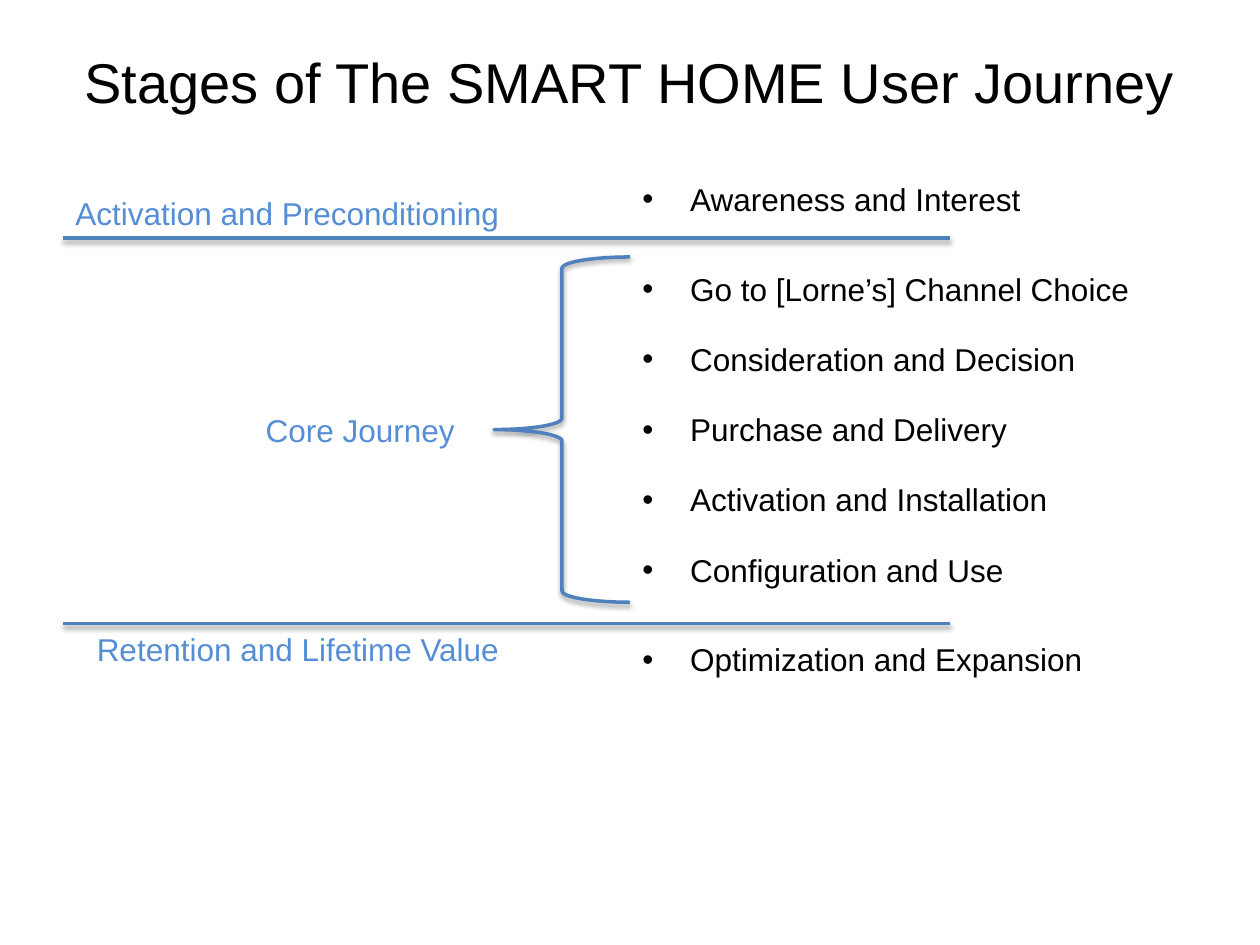
from lxml.etree import SubElement
from pptx import Presentation
from pptx.dml.color import RGBColor
from pptx.enum.shapes import MSO_CONNECTOR as Connector, MSO_SHAPE as Shape
from pptx.enum.text import MSO_ANCHOR as Anchor, PP_ALIGN as Align
from pptx.oxml import parse_xml
from pptx.oxml.ns import nsdecls, qn
from pptx.util import Inches, Pt


def color(value):
    return RGBColor.from_string(value)


def style_outline(shape):
    """Blue outline with a soft shadow straight below."""
    shape.line.color.rgb = color("4F81BD")
    shape.line.width = Pt(2)
    shape._element.spPr.append(parse_xml(
        f'<a:effectLst {nsdecls("a")}>'
        f'<a:outerShdw blurRad="{Pt(3.1)}" dist="{Pt(1.6)}" dir="5400000" rotWithShape="0">'
        '<a:srgbClr val="000000"><a:alpha val="38000"/></a:srgbClr>'
        '</a:outerShdw></a:effectLst>'))


deck = Presentation()
deck.slide_width, deck.slide_height = Inches(10), Inches(7.5)
page = deck.slides.add_slide(deck.slide_layouts[6])

# Title and stage labels: text, left, top, width, height, size, color
labels = [
    ("Stages of The SMART HOME User Journey", 0.5, 0.3, 9, 0.69, 32, "000000"),
    ("Activation and Preconditioning", 0.5, 1.49, 3.61, 0.4, 18, "558ED5"),
    ("Retention and Lifetime Value", 0.67, 4.95, 3.43, 0.4, 18, "558ED5"),
    ("Core Journey", 2.01, 3.21, 1.72, 0.4, 18, "558ED5"),
]
for text, left, top, width, height, size, ink in labels:
    box = page.shapes.add_textbox(Inches(left), Inches(top), Inches(width), Inches(height))
    frame = box.text_frame
    frame.text = text
    is_title = size == 32
    frame.word_wrap = is_title
    frame.vertical_anchor = Anchor.MIDDLE if is_title else Anchor.TOP
    para = frame.paragraphs[0]
    para.alignment = Align.CENTER if is_title else Align.LEFT
    font = para.runs[0].font
    font.name, font.size, font.color.rgb = "Arial", Pt(size), color(ink)

# Journey steps, with a wider gap between the three stages
stages = [
    ["Awareness and Interest"],
    ["Go to [Lorne’s] Channel Choice", "Consideration and Decision",
     "Purchase and Delivery", "Activation and Installation", "Configuration and Use"],
    ["Optimization and Expansion"],
]
box = page.shapes.add_textbox(Inches(5), Inches(1.38), Inches(4.5), Inches(5.32))
frame = box.text_frame
frame.word_wrap = True
frame.text = "\n".join(step for stage in stages for step in stage)
stage_starts = [stage[0] for stage in stages]
for index, para in enumerate(frame.paragraphs):
    if index:
        para.space_before = Pt(29.7 if para.text in stage_starts else 18.5)
    font = para.runs[0].font
    font.name, font.size, font.color.rgb = "Arial", Pt(18), color("000000")
    props = para._p.get_or_add_pPr()
    props.set("marL", str(Inches(0.38)))
    props.set("indent", str(-Inches(0.38)))
    SubElement(props, qn("a:buFont")).set("typeface", "Arial")
    SubElement(props, qn("a:buChar")).set("char", "•")

# Dividers between the stages
for y in (1.89, 4.95):
    divider = page.shapes.add_connector(
        Connector.STRAIGHT, Inches(0.5), Inches(y), Inches(7.54), Inches(y))
    style_outline(divider)

# Brace around the core journey
brace = page.shapes.add_shape(
    Shape.LEFT_BRACE, Inches(3.92), Inches(2.04), Inches(1.08), Inches(2.74))
brace.fill.background()
style_outline(brace)

deck.save("out.pptx")
